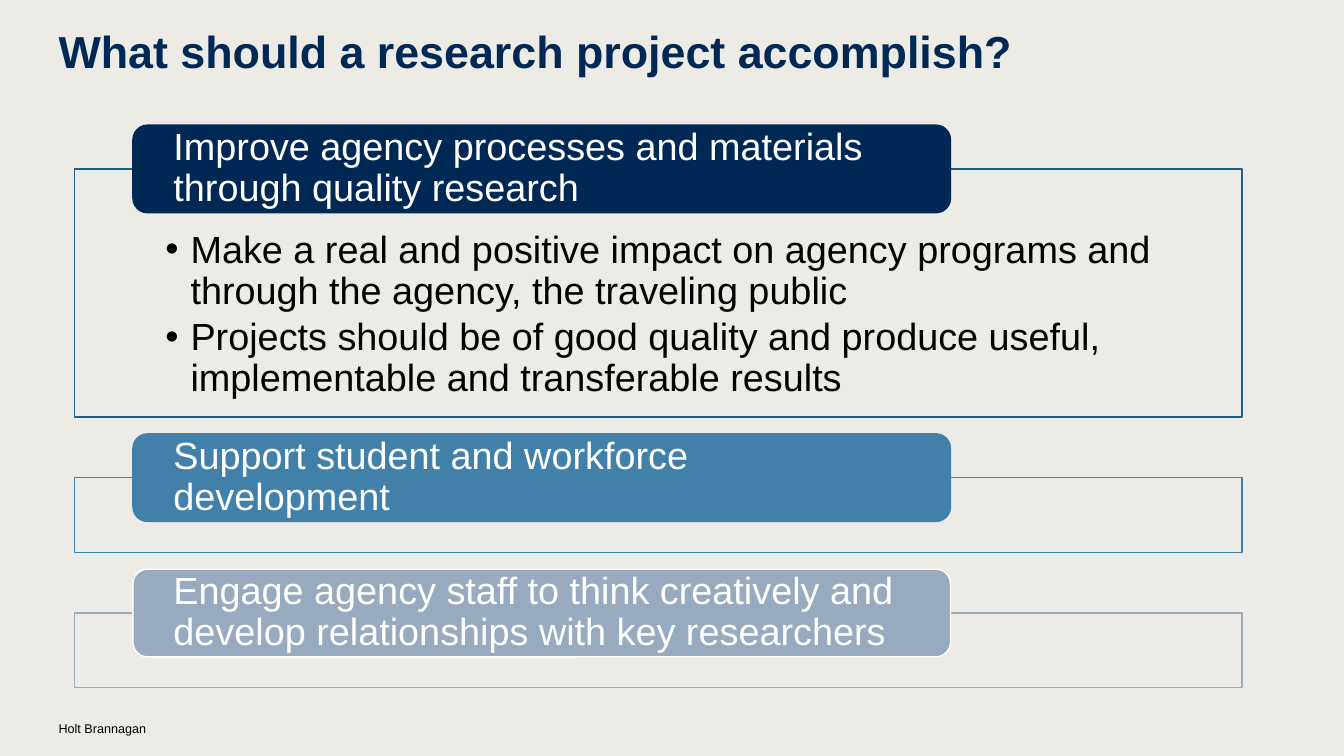
"""Build a slide listing what a research project should accomplish."""
from dataclasses import dataclass

import pptx
import pptx.dml.color
import pptx.enum.shapes
import pptx.enum.text
import pptx.oxml
import pptx.oxml.ns
import pptx.util
from pptx.util import Pt

COLORS = {
    "background": "EDEBE6", "navy": "002855", "frame_blue": "1E618B",
    "blue": "4080A9", "frame_gray": "99ABBF", "gray": "97AABF",
    "white": "FFFFFF", "black": "000000",
}
FRAME_LEFT, FRAME_WIDTH = 53.3, 833.8
HEADING_LEFT, HEADING_WIDTH, HEADING_HEIGHT = 95, 584, 62.6
FIRST_TOP, GOAL_GAP = 89.4, 12
IMPACTS = [
    "Make a real and positive impact on agency programs and through the agency, the traveling public",
    "Projects should be of good quality and produce useful, implementable and transferable results",
]


@dataclass
class Goal:
    heading: str
    frame_height: float
    frame_line: str
    fill: str
    line: str
    details: bool = False


GOALS = [
    Goal("Improve agency processes and materials through quality research",
         177.2, "frame_blue", "navy", "navy", details=True),
    Goal("Support student and workforce development",
         53.4, "blue", "blue", "blue"),
    Goal("Engage agency staff to think creatively and develop relationships with key researchers",
         53.4, "frame_gray", "gray", "white"),
]


def rgb(name: str) -> pptx.dml.color.RGBColor:
    return pptx.dml.color.RGBColor.from_string(COLORS[name])


def place(shape, left: float, top: float, width: float, height: float) -> None:
    shape.left, shape.top, shape.width, shape.height = map(Pt, (left, top, width, height))


def set_insets(frame, left: float = 0, top: float = 0, right: float = 0, bottom: float = 0) -> None:
    frame.margin_left, frame.margin_top = Pt(left), Pt(top)
    frame.margin_right, frame.margin_bottom = Pt(right), Pt(bottom)
    frame.word_wrap = True
    frame.auto_size = pptx.enum.text.MSO_AUTO_SIZE.NONE


def style(paragraph, size: float, color: str, bold: bool = False) -> None:
    paragraph.alignment = pptx.enum.text.PP_ALIGN.LEFT
    paragraph.font.name = "Arial"
    paragraph.font.size = Pt(size)
    paragraph.font.bold = bold
    paragraph.font.color.rgb = rgb(color)


def paint(shape, fill: str, line: str) -> None:
    shape.fill.solid()
    shape.fill.fore_color.rgb = rgb(fill)
    shape.line.color.rgb = rgb(line)
    shape.line.width = Pt(1)


def paint_frame(frame, line: str) -> None:
    paint(frame, "background", line)
    fill = frame._element.spPr.find(pptx.oxml.ns.qn("a:solidFill"))
    alpha = pptx.oxml.parse_xml(f'<a:alpha {pptx.oxml.ns.nsdecls("a")} val="90000"/>')
    fill[0].append(alpha)


def add_bullet(paragraph) -> None:
    properties = paragraph._p.get_or_add_pPr()
    properties.set("marL", str(Pt(18)))
    properties.set("indent", str(-Pt(18)))
    namespace = pptx.oxml.ns.nsdecls("a")
    for bullet in ('buFont {} typeface="Arial"', 'buChar {} char="•"'):
        properties.append(pptx.oxml.parse_xml(f"<a:{bullet.format(namespace)}/>"))


def write_impacts(text_frame) -> None:
    set_insets(text_frame, 64.8, 43.9, 64.8, 15.1)
    text_frame.text = "\n".join(IMPACTS)
    for paragraph in text_frame.paragraphs:
        paragraph.level = 1
        paragraph.line_spacing = 0.9
        paragraph.space_before = Pt(0)
        paragraph.space_after = Pt(4.05)
        add_bullet(paragraph)
        style(paragraph, 27, "black")


def add_goal(slide, goal: Goal, top: float) -> float:
    shapes = slide.shapes
    kinds = pptx.enum.shapes.MSO_SHAPE
    if goal.details:
        frame = slide.placeholders[1]
        write_impacts(frame.text_frame)
    else:
        frame = shapes.add_shape(kinds.RECTANGLE, 0, 0, 0, 0)
        frame.shadow.inherit = False
    frame_top = top + HEADING_HEIGHT / 2
    place(frame, FRAME_LEFT, frame_top, FRAME_WIDTH, goal.frame_height)
    paint_frame(frame, goal.frame_line)

    heading = shapes.add_shape(kinds.ROUNDED_RECTANGLE, 0, 0, 0, 0)
    heading.shadow.inherit = False
    place(heading, HEADING_LEFT, top, HEADING_WIDTH, HEADING_HEIGHT)
    paint(heading, goal.fill, goal.line)
    set_insets(heading.text_frame, left=25.9, right=25.9)
    heading.text_frame.vertical_anchor = pptx.enum.text.MSO_ANCHOR.MIDDLE
    heading.text_frame.text = goal.heading
    paragraph = heading.text_frame.paragraphs[0]
    paragraph.line_spacing = 0.9
    style(paragraph, 27, "white")
    return frame_top + goal.frame_height + GOAL_GAP


def main() -> None:
    presentation = pptx.Presentation()
    presentation.slide_width, presentation.slide_height = Pt(960), Pt(540)
    slide = presentation.slides.add_slide(presentation.slide_layouts[1])
    slide.background.fill.solid()
    slide.background.fill.fore_color.rgb = rgb("background")

    title = slide.shapes.title
    place(title, 41.8, 16.6, 877, 36)
    set_insets(title.text_frame)
    title.text_frame.vertical_anchor = pptx.enum.text.MSO_ANCHOR.TOP
    title.text_frame.text = "What should a research project accomplish?"
    style(title.text_frame.paragraphs[0], 32, "navy", bold=True)

    top = FIRST_TOP
    for goal in GOALS:
        top = add_goal(slide, goal, top)

    company = slide.shapes.add_textbox(Pt(41.8), Pt(514.8), Pt(173.5), Pt(11.5))
    set_insets(company.text_frame)
    company.text_frame.text = "Holt Brannagan"
    style(company.text_frame.paragraphs[0], 9, "black")

    presentation.save("out.pptx")


if __name__ == "__main__":
    main()
